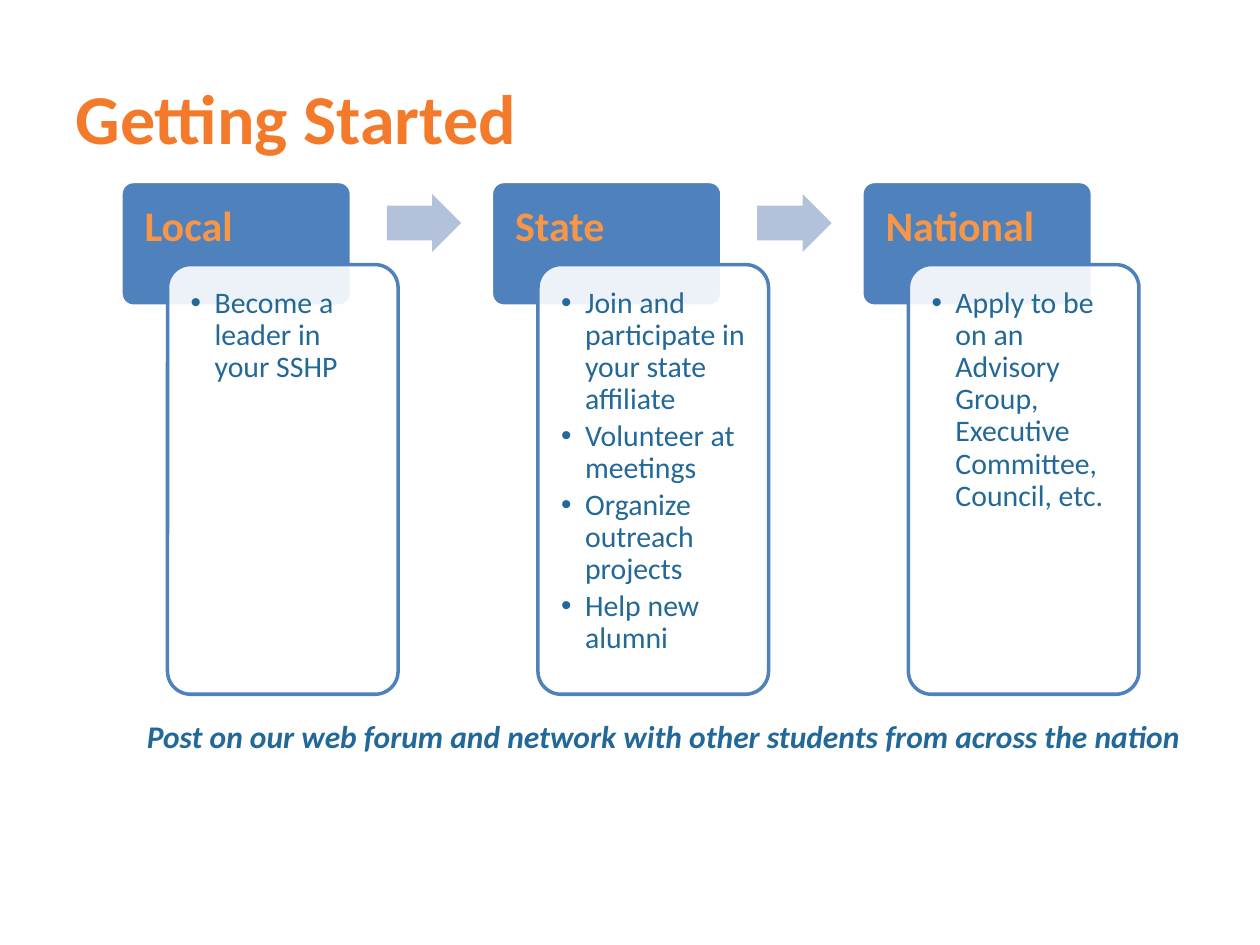
import lxml.etree
import pptx
import pptx.dml.color
import pptx.enum.shapes
import pptx.enum.text
import pptx.oxml.ns
import pptx.util

Inches = pptx.util.Inches
Pt = pptx.util.Pt
SHAPE = pptx.enum.shapes.MSO_SHAPE
ANCHOR = pptx.enum.text.MSO_ANCHOR
ALIGN = pptx.enum.text.PP_ALIGN

COLORS = {
    "title": "F37A2B",
    "header": "4F81BD",
    "header_text": "F79646",
    "text": "226899",
    "arrow": "B3C1DB",
    "white": "FFFFFF",
}
FORMATS = {
    "title": {"size": Pt(40), "bold": True},
    "header_text": {"size": Pt(24), "bold": True},
    "bullet": {"size": Pt(17), "bold": False},
    "footer": {"size": Pt(18), "bold": True, "italic": True},
}
STAGES = [
    ("Local", ["Become a leader in your SSHP"]),
    ("State", [
        "Join and participate in your state affiliate",
        "Volunteer at meetings",
        "Organize outreach projects",
        "Help new alumni",
    ]),
    ("National", [
        "Apply to be on an Advisory Group, Executive Committee, Council, etc.",
    ]),
]
FOOTER = "Post on our web forum and network with other students from across the nation "
FIRST_LEFT = 0.96
STAGE_STEP = 2.94


def rgb(name):
    """Return the named colour."""
    return pptx.dml.color.RGBColor.from_string(COLORS[name])


def add_element(parent, tag, **attributes):
    """Append a DrawingML child with the given attributes."""
    return lxml.etree.SubElement(parent, pptx.oxml.ns.qn(tag), attributes)


def format_text(paragraph, format_name, color, **layout):
    """Apply a named font format and paragraph layout."""
    font = paragraph.font
    for name, value in FORMATS[format_name].items():
        setattr(font, name, value)
    font.name = "Calibri"
    font.color.rgb = rgb(color)
    for name, value in layout.items():
        setattr(paragraph, name, value)


def add_shape(slide, kind, box, fill=None, line=None, adjustments=()):
    """Add a flat preset shape with optional fill and outline."""
    shape = slide.shapes.add_shape(kind, *map(Inches, box))
    shape.shadow.inherit = False
    for index, value in enumerate(adjustments):
        shape.adjustments[index] = value
    if fill:
        shape.fill.solid()
        shape.fill.fore_color.rgb = rgb(fill)
    else:
        shape.fill.background()
    if line:
        shape.line.color.rgb = rgb(line)
        shape.line.width = Pt(2)
    else:
        shape.line.fill.background()
    return shape


def set_frame(shape, left, top, right, bottom):
    """Wrap text from the top of a shape with the given insets."""
    frame = shape.text_frame
    frame.word_wrap = True
    frame.vertical_anchor = ANCHOR.TOP
    frame.margin_left, frame.margin_top = Inches(left), Inches(top)
    frame.margin_right, frame.margin_bottom = Inches(right), Inches(bottom)
    return frame


def add_title(slide, text):
    """Place and format the title placeholder."""
    title = slide.shapes.title
    title.left, title.top = Inches(0.5), Inches(0.3)
    title.width, title.height = Inches(9), Inches(1.25)
    title.text_frame.text = text
    title.text_frame.vertical_anchor = ANCHOR.MIDDLE
    format_text(title.text_frame.paragraphs[0], "title", "title", alignment=ALIGN.LEFT)


def add_header(slide, left, text):
    """Add the filled heading box of a stage."""
    header = add_shape(slide, SHAPE.ROUNDED_RECTANGLE, (left, 1.44, 1.83, 0.99),
                       "header", "white", [0.1])
    frame = set_frame(header, 0.16, 0.16, 0.16, 0.1)
    frame.text = text
    format_text(frame.paragraphs[0], "header_text", "header_text",
                alignment=ALIGN.LEFT, line_spacing=0.9)


def add_bullet_box(slide, left, bullets):
    """Add the translucent bullet box of a stage."""
    box = add_shape(slide, SHAPE.ROUNDED_RECTANGLE, (left, 2.1, 1.83, 3.41),
                    "white", "header", [0.1])
    fill_color = box.fill._xPr.find(".//" + pptx.oxml.ns.qn("a:srgbClr"))
    add_element(fill_color, "a:alpha", val="90000")
    frame = set_frame(box, 0.13, 0.13, 0.13, 0.13)
    frame.text = "\n".join(bullets)
    for paragraph in frame.paragraphs:
        properties = paragraph._p.get_or_add_pPr()
        properties.set("marL", str(Inches(0.19)))
        properties.set("indent", str(Inches(-0.19)))
        add_element(properties, "a:buFont", typeface="Arial")
        add_element(properties, "a:buChar", char="•")
        format_text(paragraph, "bullet", "text", alignment=ALIGN.LEFT,
                    line_spacing=0.9, space_after=Pt(2.7))


def add_footer(slide, text):
    """Add the closing line below the stages."""
    footer = add_shape(slide, SHAPE.ROUNDED_RECTANGLE, (0.67, 5.61, 9.25, 0.58))
    frame = set_frame(footer, 0.1, 0.05, 0.1, 0.05)
    frame.text = text
    format_text(frame.paragraphs[0], "footer", "text", alignment=ALIGN.CENTER)


def main():
    """Build and save the slide."""
    presentation = pptx.Presentation()
    presentation.slide_width, presentation.slide_height = Inches(10), Inches(7.5)
    slide = presentation.slides.add_slide(presentation.slide_layouts[5])
    add_title(slide, "Getting Started")
    for index, (heading, bullets) in enumerate(STAGES):
        left = FIRST_LEFT + index * STAGE_STEP
        add_header(slide, left, heading)
        add_bullet_box(slide, left + 0.37, bullets)
        if index < len(STAGES) - 1:
            add_shape(slide, SHAPE.RIGHT_ARROW, (left + 2.11, 1.54, 0.59, 0.46),
                      "arrow", adjustments=[0.6, 0.5])
    add_footer(slide, FOOTER)
    presentation.save("out.pptx")


if __name__ == "__main__":
    main()
